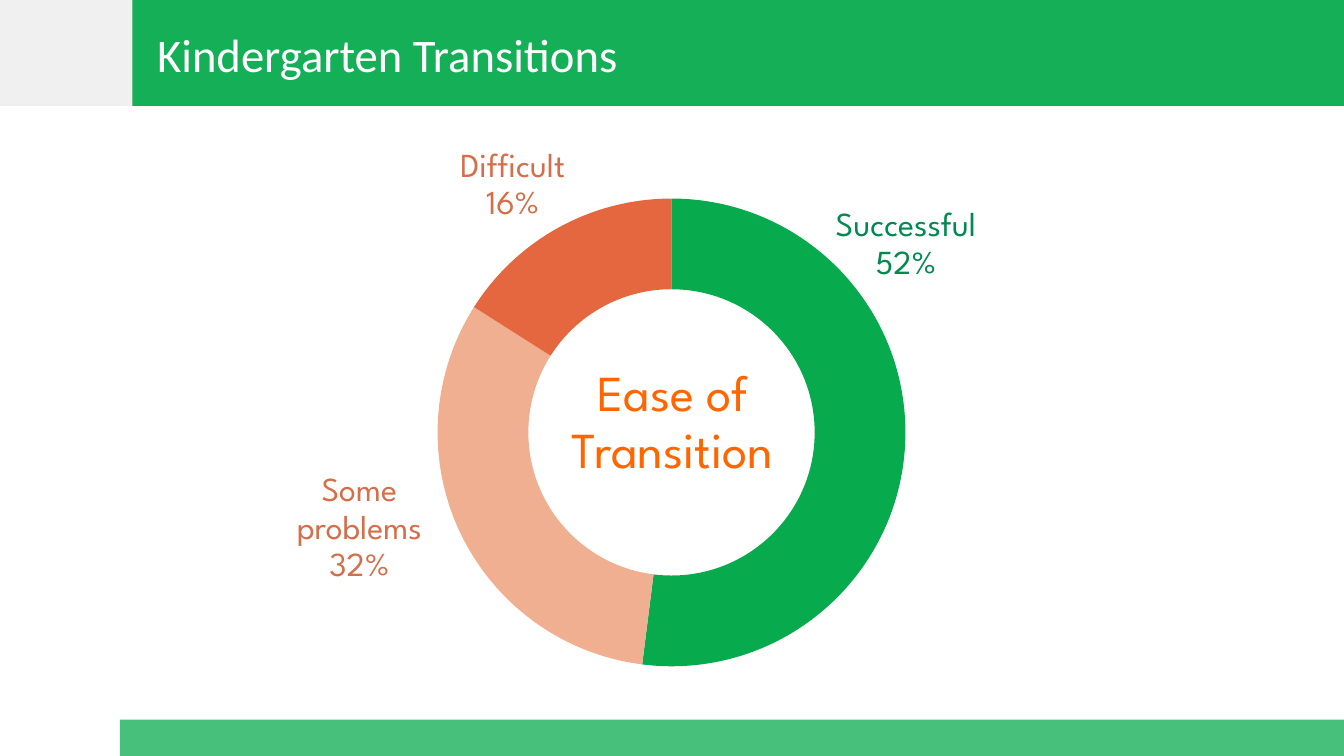
from dataclasses import dataclass
from math import cos, pi, sin, tan

from lxml import etree
from pptx import Presentation
from pptx import util as u
from pptx.dml.color import RGBColor
from pptx.enum import shapes, text
from pptx.oxml.ns import qn

MID_X, MID_Y = 6.66, 4.29
OUTER, INNER = 2.32, 1.42
Point = tuple[int, int]


@dataclass
class Bar:
    left: float
    top: float
    width: float
    height: float
    color: str
    alpha: int = 100


@dataclass
class Slice:
    share: float
    color: str


@dataclass
class Label:
    lines: list[str]
    left: float
    top: float
    width: float
    height: float
    size: float
    color: str
    font: str = "League Spartan"
    align: text.PP_ALIGN = text.PP_ALIGN.CENTER
    spacing: float = 0.93
    wrap: bool = True
    grow: bool = True


BARS = [
    Bar(1.31, 0, 12.02, 1.05, "15AF57"),
    Bar(1.19, 7.14, 12.15, 0.36, "47C07B"),
    Bar(0, 0, 1.32, 1.05, "D9D9D9", 39),
]
SLICES = [Slice(0.52, "08AA4E"), Slice(0.32, "F1AF91"), Slice(0.16, "E5673F")]
LABELS = [
    Label(["Ease of", "Transition"], 5.45, 3.59, 2.44, 1.23, 36, "FF6600", wrap=False),
    Label(["Difficult", "16%"], 3.79, 1.41, 2.59, 0.85, 24, "D56E4A"),
    Label(["Some", "problems", "32%"], 2.06, 4.63, 3.01, 1.23, 24, "D56E4A"),
    Label(["Successful", "52%"], 7.48, 2, 3.01, 0.85, 24, "008A4F"),
]
TITLE = Label(["Kindergarten Transitions"], 1.46, 0.21, 11.62, 0.63, 33.3, "FFFFFF",
              "Calibri", text.PP_ALIGN.LEFT, 1.0, grow=False)


def paint(shape, color: str, alpha: int = 100) -> None:
    shape.shadow.inherit = False
    shape.line.fill.background()
    shape.fill.solid()
    shape.fill.fore_color.rgb = RGBColor.from_string(color)
    if alpha < 100:
        tint = shape.fill._xPr.find(qn("a:solidFill"))[0]
        etree.SubElement(tint, qn("a:alpha"), val=str(alpha * 1000))


def draw_bar(tree, bar: Bar) -> None:
    box = map(u.Inches, (bar.left, bar.top, bar.width, bar.height))
    paint(tree.add_shape(shapes.MSO_SHAPE.RECTANGLE, *box), bar.color, bar.alpha)


def place(radius: float, turn: float, pull: float = 0) -> Point:
    """Point at a share of a turn, moved along the tangent by pull radii."""
    t = 2 * pi * turn
    return (u.Inches(MID_X + radius * (sin(t) + pull * cos(t))),
            u.Inches(MID_Y - radius * (cos(t) - pull * sin(t))))


def arc(radius: float, stops: list[float]) -> list[Point]:
    """Start point, then three Bezier points for each pair of stops."""
    points = [place(radius, stops[0])]
    for a, b in zip(stops, stops[1:]):
        pull = 4 / 3 * tan(pi * (b - a) / 2)
        points += [place(radius, a, pull), place(radius, b, -pull), place(radius, b)]
    return points


def bend(lines: list) -> None:
    """Turn each three line steps into one curve."""
    for i in range(0, len(lines), 3):
        curve = etree.Element(qn("a:cubicBezTo"))
        lines[i].addprevious(curve)
        for line in lines[i:i + 3]:
            curve.append(line[0])
            line.getparent().remove(line)


def draw_slice(tree, part: Slice, start: float) -> float:
    end = round(start + part.share, 2)
    stops = [start, *(q for q in (0.25, 0.5, 0.75) if start < q < end), end]
    rim, hole = arc(OUTER, stops), arc(INNER, stops[::-1])
    pen = tree.build_freeform(*rim[0])
    pen.add_line_segments(rim[1:] + hole, close=True)
    shape = pen.convert_to_shape()
    lines = list(shape._element.iter(qn("a:lnTo")))
    bend(lines[:len(rim) - 1])
    bend(lines[len(rim):])
    paint(shape, part.color)
    return end


def draw_label(tree, label: Label) -> None:
    box = map(u.Inches, (label.left, label.top, label.width, label.height))
    frame = tree.add_textbox(*box).text_frame
    frame.word_wrap = label.wrap
    if label.grow:
        frame.auto_size = text.MSO_AUTO_SIZE.SHAPE_TO_FIT_TEXT
    for i, line in enumerate(label.lines):
        para = frame.add_paragraph() if i else frame.paragraphs[0]
        para.alignment = label.align
        para.line_spacing = label.spacing
        run = para.add_run()
        run.text = line
        run.font.name = label.font
        run.font.size = u.Pt(label.size)
        run.font.color.rgb = RGBColor.from_string(label.color)


def main() -> None:
    deck = Presentation()
    deck.slide_width, deck.slide_height = u.Inches(13.33), u.Inches(7.5)
    slide = deck.slides.add_slide(deck.slide_layouts[6])

    # Header and footer bars
    for bar in BARS:
        draw_bar(slide.shapes, bar)

    # Ring with its labels
    ring = slide.shapes.add_group_shape().shapes
    start = 0.0
    for part in SLICES:
        start = draw_slice(ring, part, start)
    for label in LABELS:
        draw_label(ring, label)

    # Title
    draw_label(slide.shapes, TITLE)
    deck.save("out.pptx")


if __name__ == "__main__":
    main()
